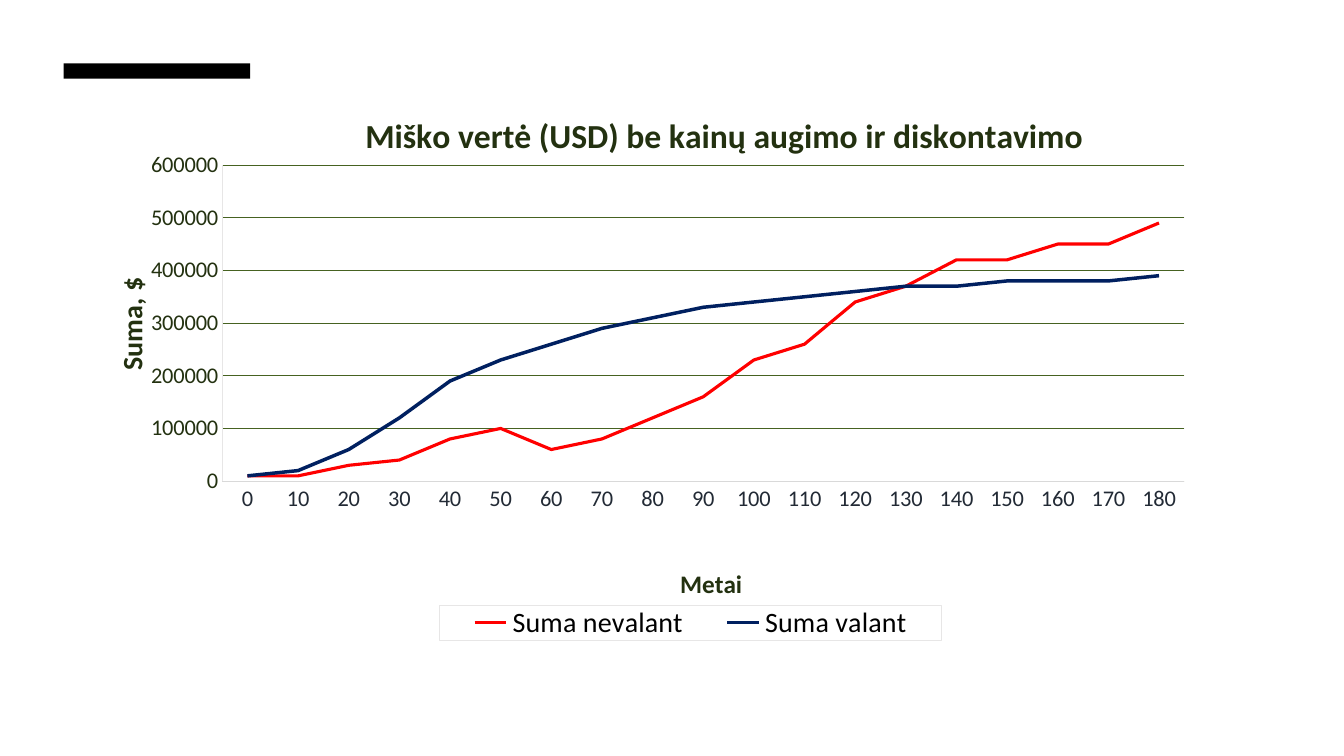
from lxml import etree
from pptx import Presentation
from pptx.chart.data import CategoryChartData
from pptx.dml.color import RGBColor
from pptx.enum.chart import XL_CHART_TYPE, XL_LEGEND_POSITION, XL_MARKER_STYLE, XL_TICK_MARK
from pptx.enum.shapes import MSO_SHAPE
from pptx.oxml import parse_xml
from pptx.oxml.ns import nsdecls, qn
from pptx.util import Inches, Pt

LINE = XL_CHART_TYPE.LINE
BOTTOM = XL_LEGEND_POSITION.BOTTOM
NO_MARKER = XL_MARKER_STYLE.NONE
NO_TICK = XL_TICK_MARK.NONE
RECTANGLE = MSO_SHAPE.RECTANGLE

BLACK = RGBColor(0x00, 0x00, 0x00)
DARK_GREEN = RGBColor(0x23, 0x31, 0x10)
GRID_GREEN = RGBColor(0x46, 0x62, 0x21)
SLATE = RGBColor(0x22, 0x2A, 0x35)
GREY = RGBColor(0xD9, 0xD9, 0xD9)
PALE_GREY = RGBColor(0xE7, 0xE6, 0xE6)
RED = RGBColor(0xFF, 0x00, 0x00)
NAVY = RGBColor(0x00, 0x20, 0x60)

FONT = "Calibri"
HEADING = "Miško vertė (USD) be kainų augimo ir diskontavimo"
YEARS_TITLE = "Metai"
SUM_TITLE = "Suma, $"
YEARS = range(0, 181, 10)
FOREST_VALUES = [
    ("Suma nevalant", RED, 2.25,
     (10, 10, 30, 40, 80, 100, 60, 80, 120, 160, 230, 260, 340, 370, 420, 420, 450, 450, 490)),
    ("Suma valant", NAVY, 2.5,
     (10, 20, 60, 120, 190, 230, 260, 290, 310, 330, 340, 350, 360, 370, 370, 380, 380, 380, 390)),
]
THOUSAND = 1000


def style_font(font, size, color, bold=False):
    font.name, font.size, font.bold = FONT, Pt(size), bold
    font.color.rgb = color


def style_line(line, color, width):
    line.color.rgb = color
    line.width = Pt(width)


def write_title(title, text, size):
    title.text_frame.text = text
    style_font(title.text_frame.paragraphs[0].font, size, DARK_GREEN, True)


def place(part, after, x, y, w=None, h=None, inner=False):
    for layout in part.findall(qn("c:layout")):
        part.remove(layout)
    layout = etree.Element(qn("c:layout"))
    manual = etree.SubElement(layout, qn("c:manualLayout"))
    settings = [("layoutTarget", "inner")] if inner else []
    settings += [("xMode", "edge"), ("yMode", "edge"), ("x", x), ("y", y), ("w", w), ("h", h)]
    for tag, value in settings:
        if value is not None:
            etree.SubElement(manual, qn(f"c:{tag}")).set("val", str(value))
    if after:
        part.find(qn(after)).addnext(layout)
    else:
        part.insert(0, layout)


prs = Presentation()
prs.slide_width, prs.slide_height = Inches(13.33), Inches(7.5)
slide = prs.slides.add_slide(prs.slide_layouts[6])

accent_bar = slide.shapes.add_shape(RECTANGLE, Inches(0.63), Inches(0.63), Inches(1.85), Inches(0.15))
accent_bar.shadow.inherit = False
accent_bar.fill.solid()
accent_bar.fill.fore_color.rgb = BLACK
accent_bar.line.fill.background()

data = CategoryChartData()
data.categories = [str(year) for year in YEARS]
for name, _, _, thousands in FOREST_VALUES:
    data.add_series(name, [value * THOUSAND for value in thousands])
chart = slide.shapes.add_chart(
    LINE, Inches(0.7), Inches(0.7), Inches(11.93), Inches(6.09), data).chart
style_font(chart.font, 10, BLACK)

chart.plots[0].vary_by_categories = False
for series, (_, color, width, _) in zip(chart.plots[0].series, FOREST_VALUES):
    style_line(series.format.line, color, width)
    series.marker.style = NO_MARKER
    series.smooth = False

years_axis, sum_axis = chart.category_axis, chart.value_axis
for axis, text, title_size, label_color, line_color in (
        (years_axis, YEARS_TITLE, 18, SLATE, GREY),
        (sum_axis, SUM_TITLE, 20, DARK_GREEN, PALE_GREY)):
    axis.major_tick_mark = axis.minor_tick_mark = NO_TICK
    style_font(axis.tick_labels.font, 16, label_color)
    style_line(axis.format.line, line_color, 0.75)
    write_title(axis.axis_title, text, title_size)
sum_axis.minimum_scale, sum_axis.maximum_scale = 0, 600 * THOUSAND
sum_axis.major_unit = 100 * THOUSAND
sum_axis.has_major_gridlines = True
style_line(sum_axis.major_gridlines.format.line, GRID_GREEN, 0.75)

chart.has_title = True
write_title(chart.chart_title, HEADING, 24)
chart.chart_title.include_in_layout = False
chart.has_legend = True
chart.legend.position = BOTTOM
chart.legend.include_in_layout = False
style_font(chart.legend.font, 20, BLACK)

chart_root = chart.element
legend = chart_root.xpath(".//c:legend")[0]
legend.find(qn("c:overlay")).addnext(parse_xml(
    f'<c:spPr {nsdecls("c", "a")}><a:noFill/><a:ln w="9525"><a:solidFill>'
    f'<a:srgbClr val="{PALE_GREY}"/></a:solidFill></a:ln></c:spPr>'))
sum_body = chart_root.xpath(".//c:valAx/c:title//a:bodyPr")[0]
sum_body.set("rot", "-5400000")
sum_body.set("vert", "horz")

place(chart_root.xpath(".//c:plotArea")[0], None, 0.126, 0.154, 0.8, 0.515, inner=True)
place(chart_root.xpath("./c:chart/c:title")[0], "c:tx", 0.24, 0.06)
place(chart_root.xpath(".//c:catAx/c:title")[0], "c:tx", 0.503, 0.8)
place(chart_root.xpath(".//c:valAx/c:title")[0], "c:tx", 0.03, 0.328)
place(legend, "c:legendPos", 0.307, 0.871, 0.417, 0.057)

prs.save("out.pptx")
